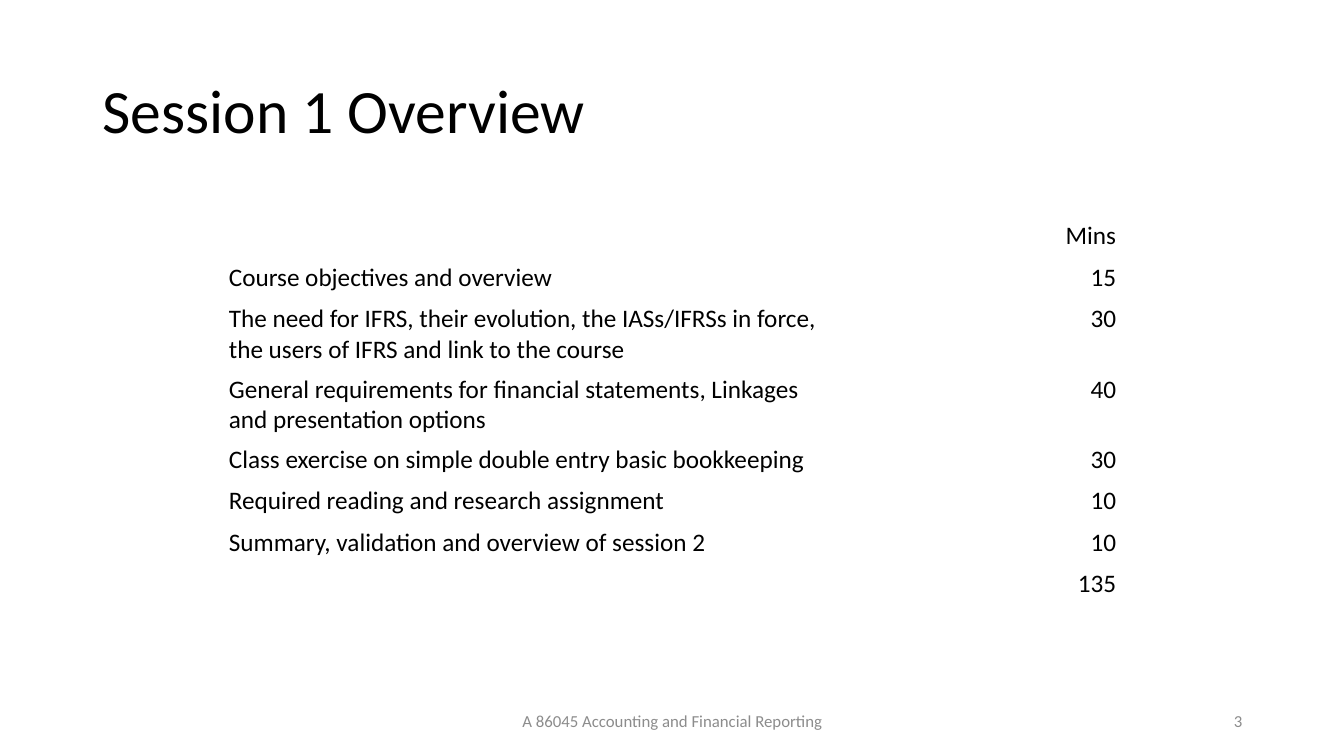
from pptx import Presentation
from pptx.dml.color import RGBColor
from pptx.enum.text import MSO_ANCHOR, PP_ALIGN
from pptx.util import Inches, Pt

LEFT, CENTER, RIGHT = PP_ALIGN.LEFT, PP_ALIGN.CENTER, PP_ALIGN.RIGHT
MIDDLE = MSO_ANCHOR.MIDDLE
BLANK_LAYOUT = 6
FONT = "Calibri"
COLORS = {"page": "FFFFFF", "text": "000000", "footer": "8C8C8C"}
COLUMN_SHARES = (0.69, 0.31)
ROW_HEIGHT = 0.41
AGENDA = [
    ("", "Mins"),
    ("Course objectives and overview", "15"),
    ("The need for IFRS, their evolution, the IASs/IFRSs in force, "
     "the users of IFRS and link to the course", "30"),
    ("General requirements for financial statements, Linkages "
     "and presentation options", "40"),
    ("Class exercise on simple double entry basic bookkeeping", "30"),
    ("Required reading and research assignment", "10"),
    ("Summary, validation and overview of session 2", "10"),
    ("", "135"),
]


def write_text(frame, text, size, color, **para_format):
    """Write one formatted paragraph into a text frame."""
    para = frame.paragraphs[0]
    for name, value in para_format.items():
        setattr(para, name, value)
    for font in (para.font, para.add_run().font if text else para.font):
        font.name, font.size = FONT, Pt(size)
        font.color.rgb = RGBColor.from_string(COLORS[color])
    if text:
        para.runs[0].text = text


def add_text(page, box, text, size, color, **para_format):
    """Place a vertically centred, wrapping text box."""
    frame = page.shapes.add_textbox(*map(Inches, box)).text_frame
    for name, value in {"word_wrap": True, "vertical_anchor": MIDDLE}.items():
        setattr(frame, name, value)
    write_text(frame, text, size, color, **para_format)


def add_agenda(page, box):
    """Place the table of topics and minutes."""
    left, top, width = box
    table = page.shapes.add_table(
        len(AGENDA), len(COLUMN_SHARES), Inches(left), Inches(top),
        Inches(width), Inches(ROW_HEIGHT * len(AGENDA))).table
    table.first_row = table.horz_banding = False
    for column, share in zip(table.columns, COLUMN_SHARES):
        column.width = Inches(width * share)
    for row, texts in zip(table.rows, AGENDA):
        row.height = Inches(ROW_HEIGHT)
        for cell, text, align in zip(row.cells, texts, (LEFT, RIGHT)):
            cell.fill.background()
            write_text(cell.text_frame, text, 18, "text", alignment=align)


def add_footer(page, box):
    """Place the course name in the centre and the page number at the right."""
    left, top, width, height = box
    name_width, number_width = 4.5, 3
    name_left = left + (width - name_width) / 2
    number_left = left + width - number_width
    add_text(page, (name_left, top, name_width, height),
             "A 86045 Accounting and Financial Reporting", 12, "footer",
             alignment=CENTER)
    add_text(page, (number_left, top, number_width, height), "3", 12, "footer",
             alignment=RIGHT)


def main():
    """Build and save the session overview."""
    deck = Presentation()
    deck.slide_width, deck.slide_height = Inches(13.33), Inches(7.5)
    page = deck.slides.add_slide(deck.slide_layouts[BLANK_LAYOUT])
    fill = page.background.fill
    fill.solid()
    fill.fore_color.rgb = RGBColor.from_string(COLORS["page"])
    add_text(page, (0.92, 0.4, 11.5, 1.45), "Session 1 Overview", 44, "text",
             line_spacing=0.9)
    add_agenda(page, (2.17, 2.14, 9))
    add_footer(page, (0.92, 6.95, 11.5, 0.4))
    deck.save("out.pptx")


if __name__ == "__main__":
    main()
